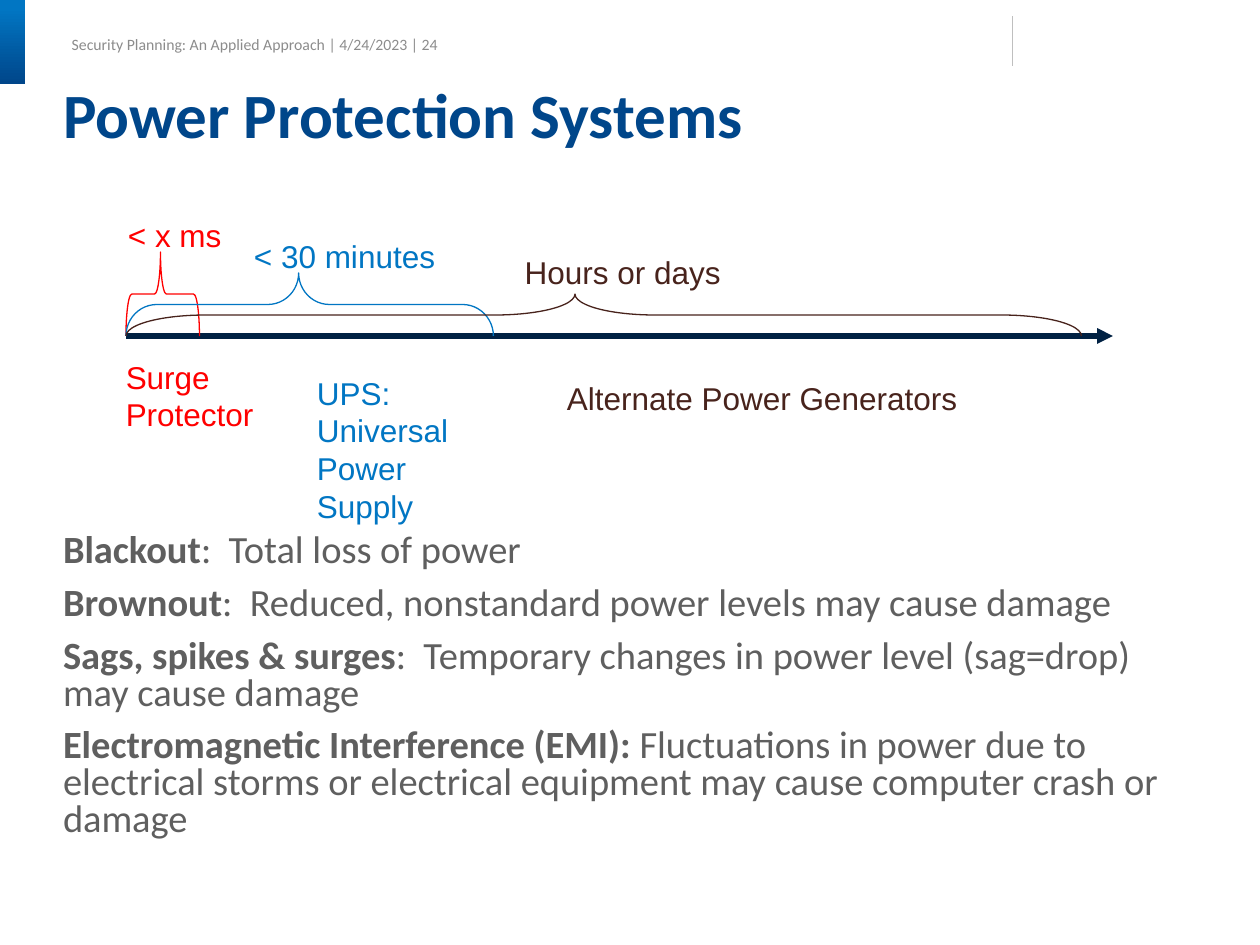
import dataclasses

import lxml.etree
import pptx
import pptx.dml.color
import pptx.enum.shapes
import pptx.enum.text
import pptx.oxml.ns
import pptx.util

Pt = pptx.util.Pt
qn = pptx.oxml.ns.qn
kinds = pptx.enum.shapes.MSO_SHAPE
fits = pptx.enum.text.MSO_AUTO_SIZE
anchors = pptx.enum.text.MSO_ANCHOR


@dataclasses.dataclass(frozen=True)
class Theme:
    navy: str = "00468A"
    blue: str = "0176C3"
    red: str = "FF0000"
    brown: str = "48231C"
    ink: str = "002143"
    grey: str = "5F5F5F"
    pale: str = "8C8C8C"
    rule: str = "BFBFBF"
    sans: str = "Calibri"
    plain: str = "Arial"
    head: int = 36
    body: int = 22
    label: int = 18
    small: int = 9


theme = Theme()
color = pptx.dml.color.RGBColor.from_string


def write(para, text, *, size, tint, face=theme.sans, bold=False):
    run = para.add_run()
    run.text = text
    run.font.name = face
    run.font.size = Pt(size)
    run.font.bold = bold
    run.font.color.rgb = color(tint)


def draw(x1, y1, x2, y2, tint, width):
    line = slide.shapes.add_connector(
        pptx.enum.shapes.MSO_CONNECTOR.STRAIGHT, Pt(x1), Pt(y1), Pt(x2), Pt(y2))
    line.line.color.rgb = color(tint)
    line.line.width = Pt(width)
    lxml.etree.SubElement(line._element.spPr, qn("a:effectLst"))
    return line


deck = pptx.Presentation()
deck.slide_width, deck.slide_height = Pt(720), Pt(540)
slide = deck.slides.add_slide(deck.slide_layouts[1])
title, body = slide.placeholders

for holder, top, height in ((title, 48, 96), (body, 305.3, 147.6)):
    holder.left, holder.top, holder.width, holder.height = Pt(36), Pt(top), Pt(648), Pt(height)
    frame = holder.text_frame
    frame.margin_left = frame.margin_top = frame.margin_right = frame.margin_bottom = 0
    frame.vertical_anchor = anchors.TOP
    frame.auto_size = fits.NONE
    frame.word_wrap = True

para = title.text_frame.paragraphs[0]
para.alignment = pptx.enum.text.PP_ALIGN.LEFT
para.line_spacing = 0.9
write(para, "Power Protection Systems", size=theme.head, tint=theme.navy, bold=True)

terms = (
    ("Blackout", ":  Total loss of power"),
    ("Brownout", ":  Reduced, nonstandard power levels may cause damage"),
    ("Sags, spikes & surges",
     ":  Temporary changes in power level (sag=drop) may cause damage"),
    ("Electromagnetic Interference (EMI):",
     " Fluctuations in power due to electrical storms or electrical equipment "
     "may cause computer crash or damage"),
)
frame = body.text_frame
for index, (term, sense) in enumerate(terms):
    para = frame.add_paragraph() if index else frame.paragraphs[0]
    props = para._p.get_or_add_pPr()
    props.set("marL", "0")
    props.set("indent", "0")
    lxml.etree.SubElement(props, qn("a:buNone"))
    para.line_spacing = 0.8
    para.space_before = Pt(9 if index else 0)
    write(para, term, size=theme.body, tint=theme.grey, bold=True)
    write(para, sense, size=theme.body, tint=theme.grey)

header = slide.shapes.add_textbox(Pt(41), Pt(17), Pt(214), Pt(16.6))
frame = header.text_frame
frame.margin_left = frame.margin_top = frame.margin_right = frame.margin_bottom = 0
frame.vertical_anchor = anchors.MIDDLE
frame.word_wrap = True
write(frame.paragraphs[0], "Security Planning: An Applied Approach | 4/24/2023 | 24",
      size=theme.small, tint=theme.pale)

tab = slide.shapes.add_shape(kinds.ROUNDED_RECTANGLE, 0, 0, Pt(14.4), Pt(48))
tab.adjustments[0] = 0
tab.shadow.inherit = False
tab.line.fill.background()
tab.fill.gradient()
tab.fill.gradient_angle = 270
for stop, place, tint in zip(tab.fill.gradient_stops, (0.1, 1), (theme.blue, theme.navy)):
    stop.position = place
    stop.color.rgb = color(tint)

draw(578.7, 9.4, 578.7, 37.5, theme.rule, 0.75)

start, base = 72, 192
axis = draw(start, base, 636, base, theme.ink, 3)
lxml.etree.SubElement(axis.line._get_or_add_ln(), qn("a:tailEnd"), type="triangle")

for tall, wide, curve, tint in (
    (48, 42, 0.08, theme.red),
    (36, 210, 0.49, theme.blue),
    (24, 546, 1.9, theme.brown),
):
    left = start + (wide - tall) / 2
    top = base - (tall + wide) / 2
    brace = slide.shapes.add_shape(kinds.RIGHT_BRACE, Pt(left), Pt(top), Pt(tall), Pt(wide))
    brace.rotation = 270
    brace.adjustments[0], brace.adjustments[1] = curve, 0.47
    brace.shadow.inherit = False
    brace.fill.background()
    brace.line.color.rgb = color(tint)
    brace.line.width = Pt(0.75)

for left, top, width, tint, lines in (
    (66, 120, 70, theme.red, ("< x ms",)),
    (64.8, 200.8, 92, theme.red, ("Surge", "Protector")),
    (138, 132, 120, theme.blue, ("< 30 minutes",)),
    (174, 210, 94, theme.blue, ("UPS:", "Universal", "Power", "Supply")),
    (316.8, 213, 240, theme.brown, ("Alternate Power Generators",)),
    (292.8, 141, 130, theme.brown, ("Hours or days",)),
):
    label = slide.shapes.add_textbox(
        Pt(left), Pt(top), Pt(width), Pt(7.2 + 21.6 * len(lines)))
    frame = label.text_frame
    frame.word_wrap = True
    frame.auto_size = fits.SHAPE_TO_FIT_TEXT
    for index, text in enumerate(lines):
        para = frame.add_paragraph() if index else frame.paragraphs[0]
        write(para, text, size=theme.label, tint=tint, face=theme.plain)

deck.save("out.pptx")
